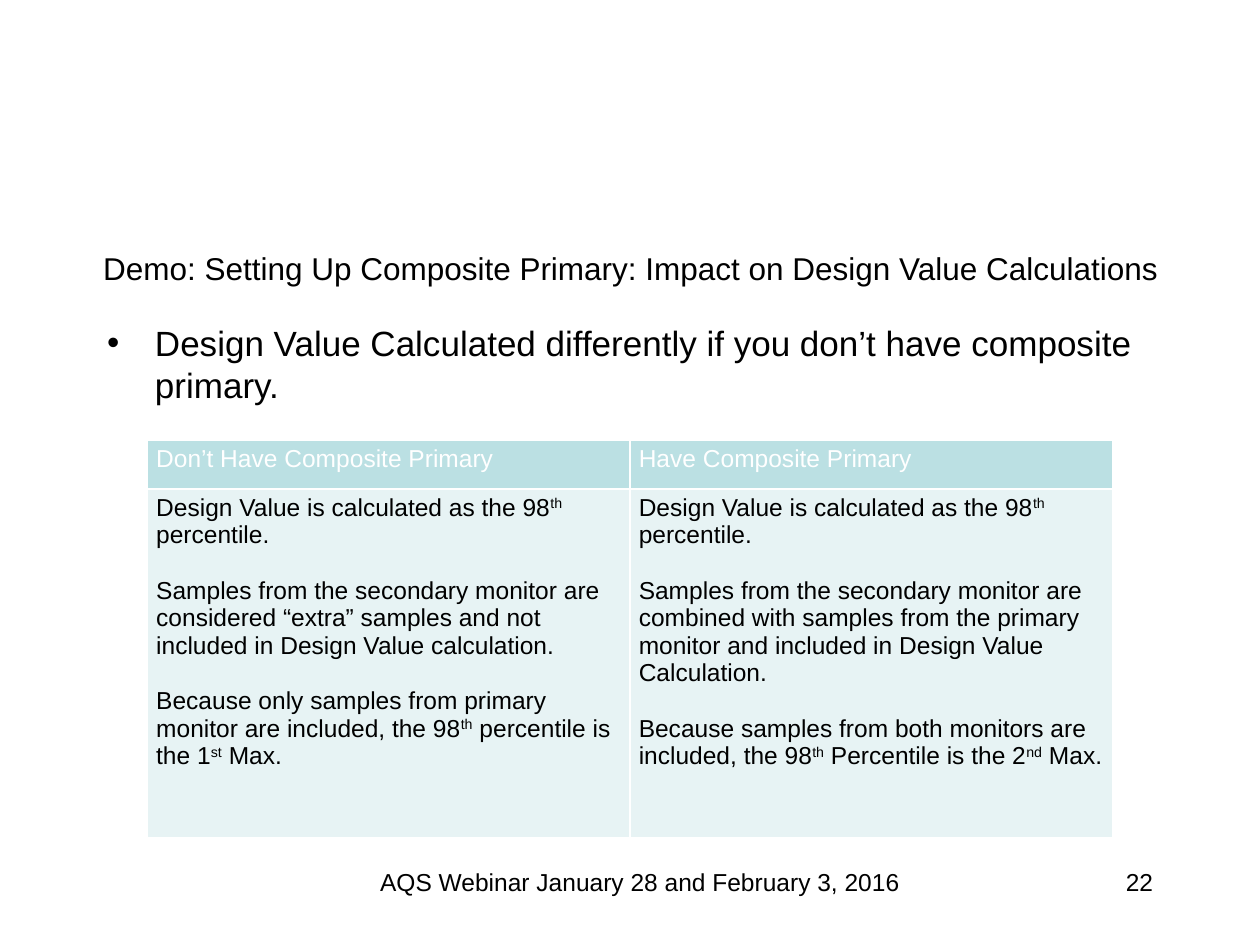
import lxml.etree
import pptx
import pptx.dml.color
import pptx.enum.text
import pptx.oxml.ns
import pptx.util

Inches, Pt = pptx.util.Inches, pptx.util.Pt
ALIGN = pptx.enum.text.PP_ALIGN
ANCHOR = pptx.enum.text.MSO_ANCHOR
qn = pptx.oxml.ns.qn


def rgb(value):
    return pptx.dml.color.RGBColor.from_string(value)


class SlideBuilder:
    font_name = "Arial"
    ink, white = "000000", "FFFFFF"
    header_fill, body_fill = "BBE0E3", "E7F3F4"

    def __init__(self, prs):
        self.s = prs.slides.add_slide(prs.slide_layouts[1])

    def place(self, sp, box):
        for name, value in zip(("left", "top", "width", "height"), box):
            setattr(sp, name, Inches(value))

    def fill_paragraph(self, p, text, size, color=ink, **paragraph_format):
        """Fill a paragraph; parts between ^ marks are superscript."""
        for name, value in paragraph_format.items():
            setattr(p, name, value)
        for i, part in enumerate(text.split("^")):
            r = p.add_run()
            r.text = part
            style = {"name": self.font_name, "size": Pt(size), "bold": False}
            for name, value in style.items():
                setattr(r.font, name, value)
            r.font.color.rgb = rgb(color)
            if i % 2:
                r._r.get_or_add_rPr().set("baseline", "30000")

    def title(self, text, box):
        sp = self.s.shapes.title
        self.place(sp, box)
        sp.text_frame.vertical_anchor = ANCHOR.MIDDLE
        self.fill_paragraph(sp.text_frame.paragraphs[0], text, 18,
                            alignment=ALIGN.CENTER)

    def bullet(self, text, box):
        sp = self.s.placeholders[1]
        self.place(sp, box)
        p = sp.text_frame.paragraphs[0]
        pPr = p._p.get_or_add_pPr()
        pPr.set("marL", str(Inches(0.38)))
        pPr.set("indent", str(-Inches(0.38)))
        lxml.etree.SubElement(pPr, qn("a:buChar")).set("char", "•")
        self.fill_paragraph(p, text, 20, space_before=Pt(0))

    def text(self, text, box, alignment):
        sp = self.s.shapes.add_textbox(*map(Inches, box))
        sp.text_frame.word_wrap = True
        self.fill_paragraph(sp.text_frame.paragraphs[0], text, 14,
                            alignment=alignment)

    def borders(self, cell):
        tcPr = cell._tc.get_or_add_tcPr()
        for side in ("a:lnL", "a:lnR", "a:lnT", "a:lnB"):
            ln = lxml.etree.SubElement(tcPr, qn(side), w=str(Pt(1)))
            fill = lxml.etree.SubElement(ln, qn("a:solidFill"))
            lxml.etree.SubElement(fill, qn("a:srgbClr"), val=self.white)

    def cell(self, cell, paragraphs, color, fill):
        margins = {"margin_left": 0.07, "margin_right": 0.07,
                   "margin_top": 0.04, "margin_bottom": 0.04}
        for name, value in margins.items():
            setattr(cell, name, Inches(value))
        self.borders(cell)
        cell.fill.solid()
        cell.fill.fore_color.rgb = rgb(fill)
        tf = cell.text_frame
        for i, text in enumerate(paragraphs):
            p = tf.add_paragraph() if i else tf.paragraphs[0]
            self.fill_paragraph(p, text, 14, color,
                                space_before=Pt(16 if i else 0))

    def table(self, columns, box, row_heights):
        frame = self.s.shapes.add_table(2, len(columns), *map(Inches, box))
        table = frame.table
        table.horz_banding = False
        for row, height in zip(table.rows, row_heights):
            row.height = Inches(height)
        for i, (heading, paragraphs) in enumerate(columns.items()):
            table.columns[i].width = Inches(box[2] / len(columns))
            self.cell(table.cell(0, i), [heading], self.white, self.header_fill)
            self.cell(table.cell(1, i), paragraphs, self.ink, self.body_fill)


COMPARISON = {
    "Don’t Have Composite Primary": [
        "Design Value is calculated as the 98^th^ percentile.",
        "Samples from the secondary monitor are considered “extra” samples "
        "and not included in Design Value calculation.",
        "Because only samples from primary monitor are included, "
        "the 98^th^ percentile is the 1^st^ Max.",
    ],
    "Have Composite Primary": [
        "Design Value is calculated as the 98^th^ percentile.",
        "Samples from the secondary monitor are combined with samples from "
        "the primary monitor and included in Design Value Calculation.",
        "Because samples from both monitors are included, "
        "the 98^th^ Percentile is the 2^nd^ Max.",
    ],
}


def main():
    prs = pptx.Presentation()
    prs.slide_width, prs.slide_height = Inches(10), Inches(7.5)
    slide = SlideBuilder(prs)

    # Title and lead statement
    slide.title("Demo: Setting Up Composite Primary: Impact on Design Value "
                "Calculations", (0.42, 1.75, 9.17, 0.75))
    slide.bullet("Design Value Calculated differently if you don’t have "
                 "composite primary.", (0.75, 2.5, 8.5, 3.67))

    # Footer and page number
    slide.text("AQS Webinar January 28 and February 3, 2016",
               (2.08, 6.83, 6, 0.5), ALIGN.CENTER)
    slide.text("22", (7.17, 6.83, 2.08, 0.5), ALIGN.RIGHT)

    # Comparison table
    slide.table(COMPARISON, (1.17, 3.49, 7.66, 3.16), (0.39, 2.77))

    prs.save("out.pptx")


if __name__ == "__main__":
    main()
